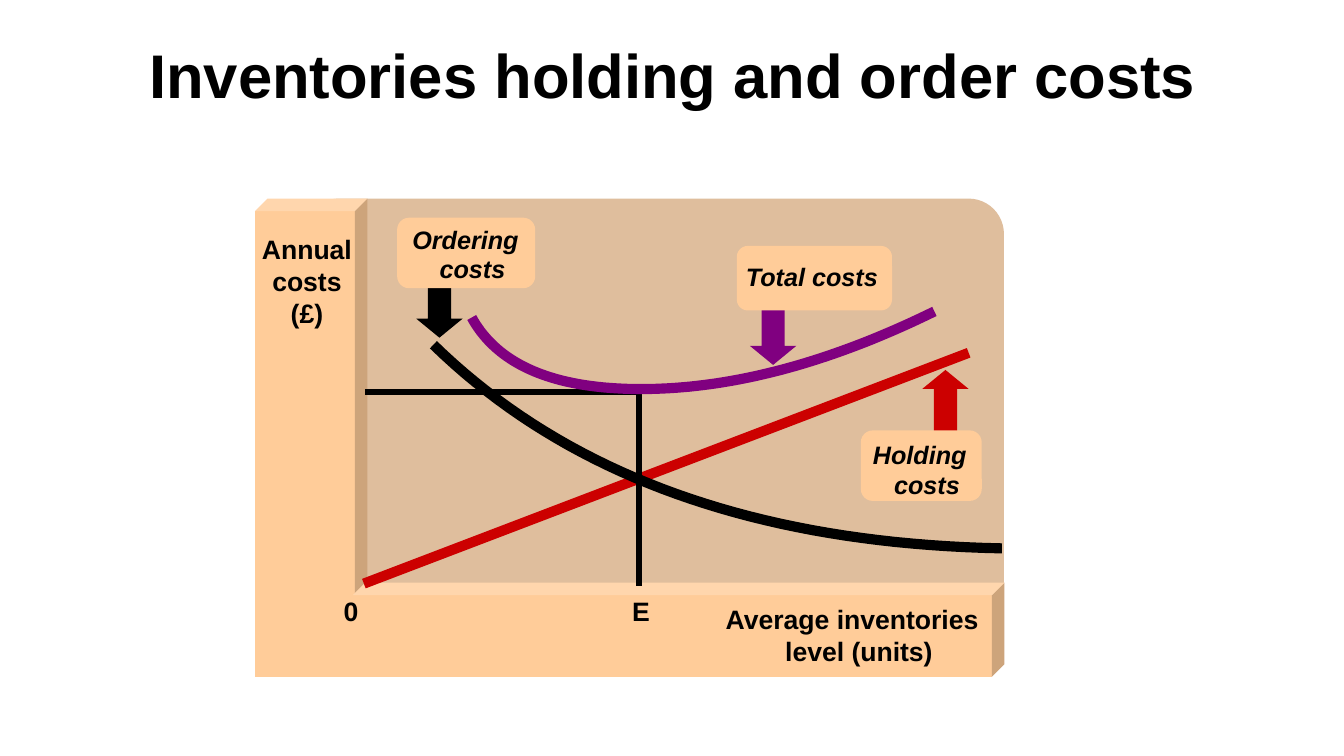
"""Build a slide on the costs of holding and ordering inventories."""
from lxml import etree
from pptx import Presentation
from pptx.dml.color import RGBColor
from pptx.enum.shapes import MSO_CONNECTOR, MSO_SHAPE
from pptx.enum.text import PP_ALIGN
from pptx.oxml.ns import qn
from pptx.util import Pt

UNIT = 9144
COLS, ROWS = 1333.33, 750
FONT = "Arial"
LEFT, MID = PP_ALIGN.LEFT, PP_ALIGN.CENTER
RECT, ROUND = MSO_SHAPE.RECTANGLE, MSO_SHAPE.ROUNDED_RECTANGLE
DOWN, UP = MSO_SHAPE.DOWN_ARROW, MSO_SHAPE.UP_ARROW
BLACK, RED, PURPLE = "000000", "CC0000", "800080"
PANEL, FRONT, SIDE, TOP = "DFBE9D", "FFCC99", "CDA47B", "FFD6AD"
DEPTH, STEPS = 12.5, 40

TITLE = ("Inventories holding and order costs", (148, 36, 1070, 76))
BOARD = (301, 197, 695, 438)
ARROWS = [(DOWN, 413, 260, BLACK), (DOWN, 744, 287, PURPLE), (UP, 915, 367, RED)]
SLABS = [(253, 209.5, 99, 462), (350, 590.5, 634, 81)]
TAGS = [(394, 216, 137, 70), (731, 244, 154, 64), (854, 427, 120, 70)]
AXES = [
    ("Annual\vcosts\v(£)", (254, 230, 101, 98), MID, 0),
    ("Average inventories\vlevel (units)", (720, 597, 263, 66), LEFT, 59),
    ("E", (627, 589, 29, 34), LEFT, 0),
    ("0", (341, 589, 26, 34), LEFT, 0),
]
NAMES = [
    ("Ordering\vcosts", (409, 220, 118, 62), 27, 21),
    ("Total costs", (740, 258, 144, 33), 0, None),
    ("Holding\vcosts", (866, 434, 106, 62), 21, 21),
]
HOLDING = (361, 579, 961, 350, RED, 7.25)
GUIDES = [(362, 389, 635, 389, BLACK, 4.5), (634, 581, 634, 381, BLACK, 4.5)]
CURVES = [
    (BLACK, [((430, 342), (630, 537), (994, 544))]),
    (PURPLE, [((468, 315), (507, 386), (636, 386)),
              ((636, 386), (770, 386), (927, 309))]),
]


def emu(*cells):
    return [round(cell * UNIT) for cell in cells]


def hue(code):
    return RGBColor.from_string(code)


def paint(shape, code):
    shape.fill.solid()
    shape.fill.fore_color.rgb = hue(code)
    shape.line.fill.background()
    shape.shadow.inherit = False


def block(slide, kind, box, code):
    shape = slide.shapes.add_shape(kind, *emu(*box))
    paint(shape, code)
    return shape


def trace(slide, dots, close):
    dots = [emu(*dot) for dot in dots]
    pen = slide.shapes.build_freeform(*dots[0], scale=1.0)
    pen.add_line_segments(dots[1:], close=close)
    return pen.convert_to_shape()


def slab(slide, x, y, w, h):
    right, low = x + w, y + h
    back, high = right + DEPTH, y - DEPTH
    block(slide, RECT, (x, y, w, h), FRONT)
    side = [(back, high), (right, y), (right, low), (back, low - DEPTH)]
    top = [(back, high), (x + DEPTH, high), (x, y), (right, y)]
    paint(trace(slide, side, True), SIDE)
    paint(trace(slide, top, True), TOP)


def rule(slide, x1, y1, x2, y2, code, width):
    line = slide.shapes.add_connector(MSO_CONNECTOR.STRAIGHT, *emu(x1, y1, x2, y2))
    line.line.color.rgb = hue(code)
    line.line.width = Pt(width)
    etree.SubElement(line._element.spPr, qn("a:effectLst"))


def bend(start, pull, end):
    shares = [step / STEPS for step in range(STEPS + 1)]
    return [tuple((1 - t) ** 2 * a + 2 * t * (1 - t) * b + t * t * c
                  for a, b, c in zip(start, pull, end)) for t in shares]


def curve(slide, code, arcs):
    dots = [dot for arc in arcs for dot in bend(*arc)]
    shape = trace(slide, dots, False)
    shape.fill.background()
    shape.line.color.rgb = hue(code)
    shape.line.width = Pt(7.25)
    shape.shadow.inherit = False


def write(slide, words, box, size, align=LEFT, hang=0, pitch=None, slant=False):
    frame = slide.shapes.add_textbox(*emu(*box)).text_frame
    frame.word_wrap = True
    frame.margin_left = frame.margin_right = frame.margin_bottom = 0
    frame.margin_top = emu(3 if pitch else 1)[0]
    frame.text = words
    para = frame.paragraphs[0]
    para.alignment = align
    para.space_before = Pt(2.2 if pitch else 1)
    if pitch:
        para.line_spacing = Pt(pitch)
    if hang:
        props = para._p.get_or_add_pPr()
        props.set("marL", str(emu(hang)[0]))
        props.set("indent", str(emu(-hang)[0]))
    for run in para.runs:
        run.font.name = FONT
        run.font.size = Pt(size)
        run.font.bold = True
        run.font.italic = slant
        run.font.color.rgb = hue(BLACK)


def main():
    deck = Presentation()
    deck.slide_width, deck.slide_height = emu(COLS, ROWS)
    slide = deck.slides.add_slide(deck.slide_layouts[6])
    write(slide, *TITLE, 44)
    block(slide, ROUND, BOARD, PANEL).adjustments[0] = 0.08
    for kind, x, y, code in ARROWS:
        block(slide, kind, (x, y, 46, 75), code).adjustments[1] = 0.41
    for box in SLABS:
        slab(slide, *box)
    for words, box, align, hang in AXES:
        write(slide, words, box, 19, align, hang)
    rule(slide, *HOLDING)
    for box in TAGS:
        block(slide, ROUND, box, FRONT).adjustments[0] = 0.17
    for words, box, hang, pitch in NAMES:
        write(slide, words, box, 18, LEFT, hang, pitch, True)
    curve(slide, *CURVES[0])
    for guide in GUIDES:
        rule(slide, *guide)
    curve(slide, *CURVES[1])
    deck.save("out.pptx")


if __name__ == "__main__":
    main()
